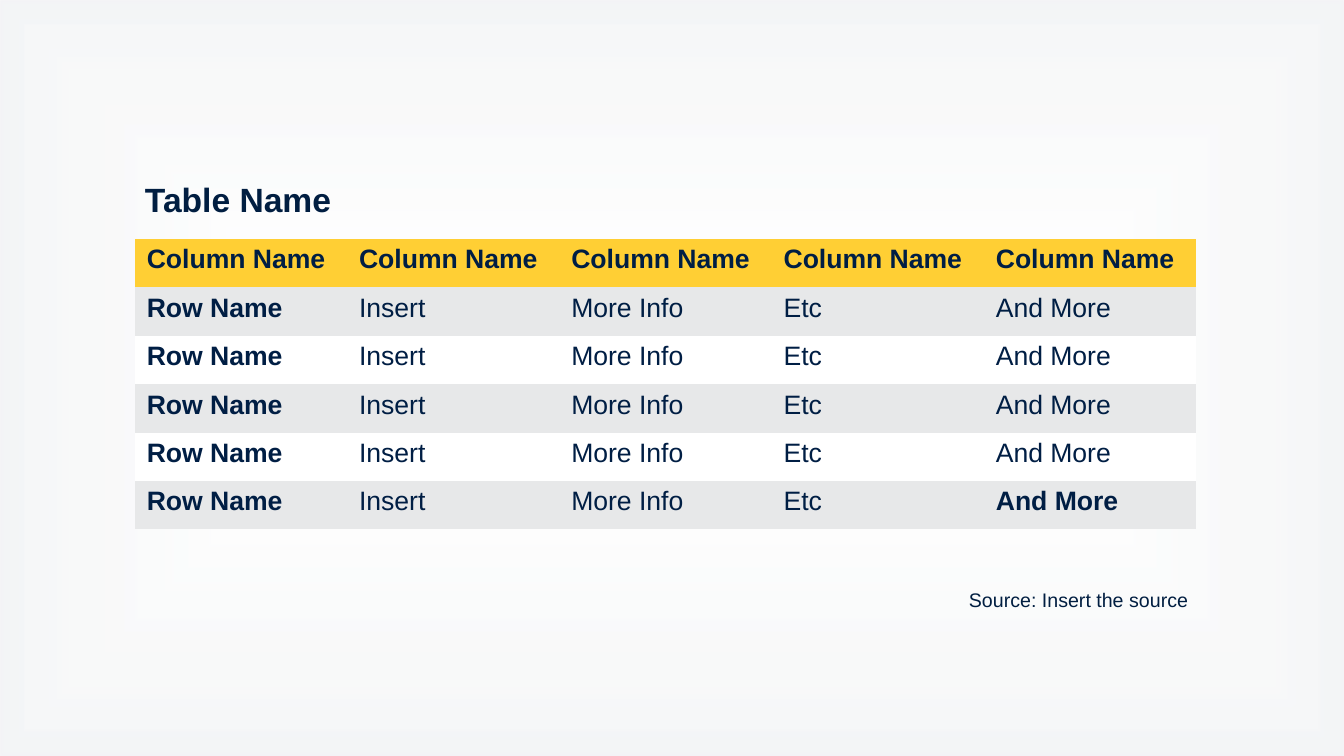
from pptx import Presentation
from pptx.dml.color import RGBColor
from pptx.enum.shapes import MSO_SHAPE
from pptx.enum.text import MSO_ANCHOR, MSO_AUTO_SIZE, PP_ALIGN
from pptx.oxml import parse_xml
from pptx.oxml.ns import nsdecls, qn
from pptx.util import Cm, Pt

RECTANGLE = MSO_SHAPE.RECTANGLE
TOP = MSO_ANCHOR.TOP
NO_AUTOFIT = MSO_AUTO_SIZE.NONE
LEFT, RIGHT = PP_ALIGN.LEFT, PP_ALIGN.RIGHT

COLORS = {
    "navy": "011E41",
    "table_text": "001E44",
    "gold": "FFCF34",
    "grey": "E7E8E9",
    "white": "FFFFFF",
}
FONT = "Arial"
PLAIN_TABLE_STYLE = "{2D5ABB26-0587-4C30-8999-92F81FD0307C}"


class TableSlide:
    def __init__(self, deck):
        self.width, self.height = deck.slide_width, deck.slide_height
        self.slide = deck.slides.add_slide(deck.slide_layouts[5])
        self.shapes = self.slide.shapes

    def add_text(self, frame, text, size, color="navy", bold=False, align=LEFT):
        paragraph = frame.paragraphs[0]
        paragraph.alignment = align
        run = paragraph.add_run()
        run.text = text
        run.font.name = FONT
        run.font.size = Pt(size)
        run.font.bold = bold
        run.font.color.rgb = RGBColor.from_string(COLORS[color])

    def vignette(self):
        backdrop = self.shapes.add_shape(RECTANGLE, 0, 0, self.width, self.height)
        backdrop.shadow.inherit = False
        backdrop.line.fill.background()
        gradient = parse_xml(
            f'<a:gradFill {nsdecls("a")} rotWithShape="1"><a:gsLst>'
            f'<a:gs pos="0"><a:srgbClr val="{COLORS["white"]}"><a:alpha val="0"/></a:srgbClr></a:gs>'
            f'<a:gs pos="100000"><a:srgbClr val="{COLORS["navy"]}"><a:alpha val="4000"/></a:srgbClr></a:gs>'
            '</a:gsLst><a:path path="rect">'
            '<a:fillToRect l="50000" t="50000" r="50000" b="50000"/></a:path></a:gradFill>'
        )
        backdrop.element.spPr.find(qn("a:ln")).addprevious(gradient)
        self.shapes.title.element.addprevious(backdrop.element)

    def title(self, text, left, top, width, height):
        heading = self.shapes.title
        heading.left, heading.top = Cm(left), Cm(top)
        heading.width, heading.height = Cm(width), Cm(height)
        frame = heading.text_frame
        frame.auto_size = NO_AUTOFIT
        frame.vertical_anchor = TOP
        self.add_text(frame, text, 24, bold=True)

    def note(self, text, left, top, width, height):
        frame = self.shapes.add_textbox(Cm(left), Cm(top), Cm(width), Cm(height)).text_frame
        frame.word_wrap = True
        self.add_text(frame, text, 14, align=RIGHT)

    def table(self, rows, bold_cells, left, top, column_width, row_height):
        columns = len(rows[0])
        holder = self.shapes.add_table(
            len(rows), columns, Cm(left), Cm(top),
            Cm(column_width * columns), Cm(row_height * len(rows)),
        )
        next(holder.element.iter(qn("a:tableStyleId"))).text = PLAIN_TABLE_STYLE
        grid = holder.table
        grid.first_row = grid.horz_banding = False
        for column in grid.columns:
            column.width = Cm(column_width)
        for r, labels in enumerate(rows):
            grid.rows[r].height = Cm(row_height)
            band = "gold" if r == 0 else "grey" if r % 2 else "white"
            for c, label in enumerate(labels):
                cell = grid.cell(r, c)
                cell.fill.solid()
                cell.fill.fore_color.rgb = RGBColor.from_string(COLORS[band])
                cell.margin_left = cell.margin_right = Cm(0.3)
                cell.margin_top = cell.margin_bottom = Cm(0.15)
                bold = r == 0 or c == 0 or (r, c) in bold_cells
                self.add_text(cell.text_frame, label, 19, "table_text", bold)


def main():
    deck = Presentation()
    deck.slide_width, deck.slide_height = Cm(33.87), Cm(19.05)
    page = TableSlide(deck)
    page.vignette()
    header = ["Column Name"] * 5
    entries = [["Row Name", "Insert", "More Info", "Etc", "And More"]] * 5
    page.table([header, *entries], {(5, 4)}, 3.4, 6.02, 5.35, 1.22)
    page.title("Table Name", 3.4, 4.37, 16.31, 1.27)
    page.note("Source: Insert the source", 17.58, 14.68, 12.62, 0.86)
    deck.save("out.pptx")


if __name__ == "__main__":
    main()
